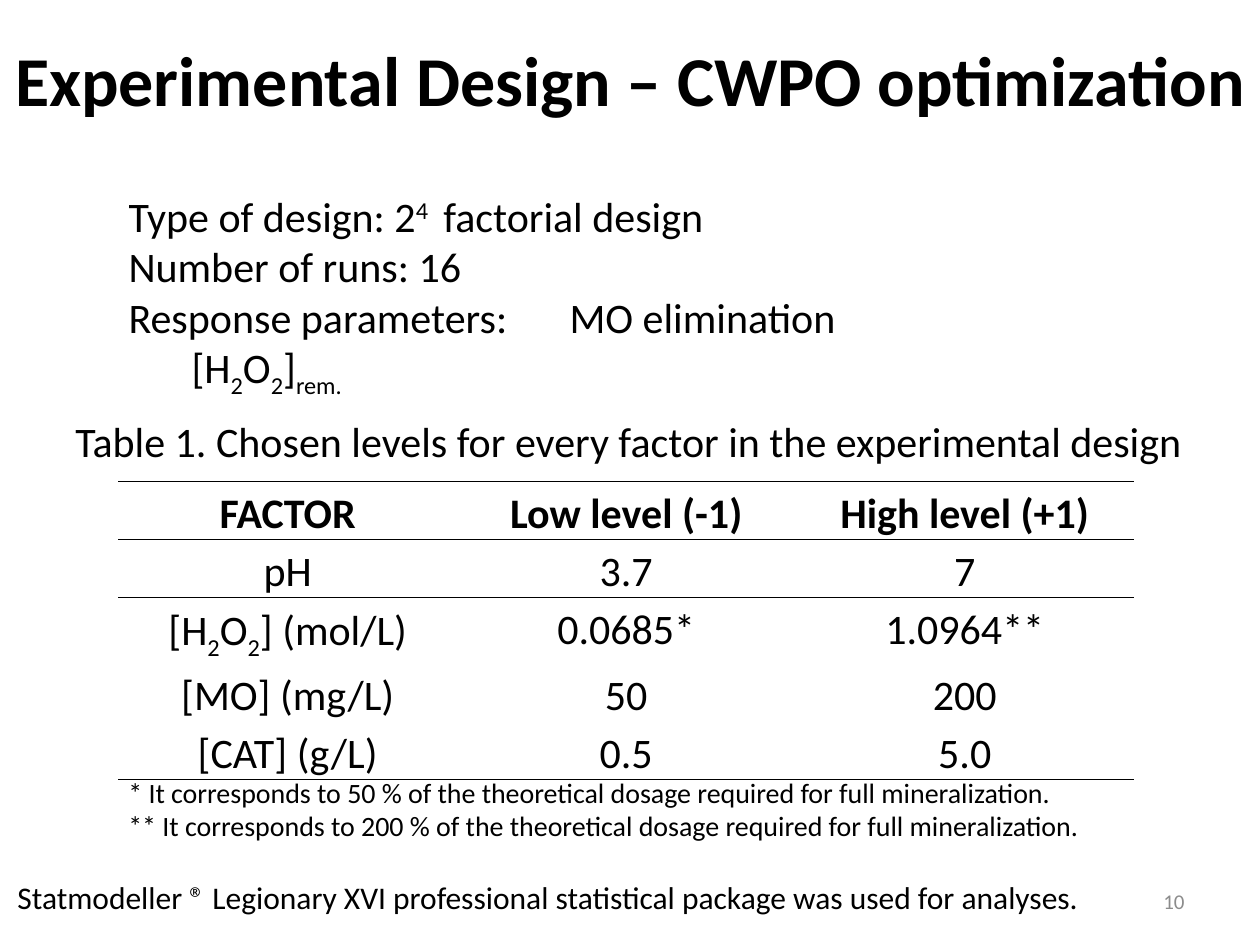
from lxml import etree
from pptx import Presentation
from pptx import util as u
from pptx.dml.color import RGBColor
from pptx.enum import text
from pptx.oxml import ns

COLORS = {"ink": "000000", "muted": "8C8C8C"}
FONT = "Calibri"
W, H = 10, 7.5
SUB, SUP = -25000, 30000
MIDDLE, TOP = text.MSO_ANCHOR.MIDDLE, text.MSO_ANCHOR.TOP
LEFT, CENTER, RIGHT = text.PP_ALIGN.LEFT, text.PP_ALIGN.CENTER, text.PP_ALIGN.RIGHT

PEROXIDE = ["[H", ("2", SUB), "O", ("2", SUB)]
DESIGN = [
    ["Type of design: 2", ("4 ", SUP), " factorial design"],
    ["Number of runs: 16"],
    ["Response parameters:\tMO elimination"],
    ["\t", *PEROXIDE, "]", ("rem.", SUB)],
]
LEVELS = [
    (["FACTOR"], ["Low level (-1)"], ["High level (+1)"]),
    (["pH"], ["3.7"], ["7"]),
    ([*PEROXIDE, "] (mol/L)"], ["0.0685*"], ["1.0964**"]),
    (["[MO] (mg/L)"], ["50"], ["200"]),
    (["[CAT] (g/L)"], ["0.5"], ["5.0"]),
]
FOOTNOTES = [
    ["* It corresponds to 50 % of the theoretical dosage required for full mineralization."],
    ["** It corresponds to 200 % of the theoretical dosage required for full mineralization."],
]


def apply(obj, values):
    for name, value in values.items():
        setattr(obj, name, value)


def sub(parent, tag, **attrs):
    return etree.SubElement(parent, ns.qn(tag), attrs)


def write(tf, lines, size, color="ink", bold=False, **para):
    """Write lines of parts; a part is a string or a (string, baseline) pair."""
    for i, parts in enumerate(lines):
        p = tf.paragraphs[0] if i == 0 else tf.add_paragraph()
        apply(p, {"alignment": LEFT, "space_before": u.Pt(0), **para})
        for part in parts:
            words, baseline = part if isinstance(part, tuple) else (part, 0)
            r = p.add_run()
            r.text = words
            apply(r.font, {"name": FONT, "size": u.Pt(size), "bold": bold})
            r.font.color.rgb = RGBColor.from_string(COLORS[color])
            if baseline:
                r.font._element.set("baseline", str(baseline))


def place(sp, box):
    for name, value in zip(("left", "top", "width", "height"), box):
        setattr(sp, name, u.Inches(value))


def add_text(s, box, lines, size, anchor=MIDDLE, wrap=True, **style):
    tf = s.shapes.add_textbox(*map(u.Inches, box)).text_frame
    apply(tf, {"word_wrap": wrap, "vertical_anchor": anchor})
    write(tf, lines, size, **style)


def add_title(s, box):
    sp = s.shapes.title
    place(sp, box)
    sp.text_frame.vertical_anchor = MIDDLE
    write(sp.text_frame, [["Experimental Design – CWPO optimization"]], 40,
          bold=True, alignment=CENTER)


def add_design(s, box):
    """Unbulleted list with one tab stop for the response parameters."""
    sp = s.placeholders[1]
    place(sp, box)
    tf = sp.text_frame
    apply(tf, {"vertical_anchor": MIDDLE, "auto_size": text.MSO_AUTO_SIZE.NONE})
    write(tf, DESIGN, 24)
    for p in tf.paragraphs:
        pPr = p._p.get_or_add_pPr()
        pPr.set("marL", "0")
        pPr.set("indent", "0")
        sub(pPr, "a:buNone")
        sub(sub(pPr, "a:tabLst"), "a:tab", pos=str(u.Inches(4)), algn="l")


def add_rule(cell, side, position):
    ln = etree.Element(ns.qn(side), w=str(u.Pt(1)))
    sub(sub(ln, "a:solidFill"), "a:srgbClr", val=COLORS["ink"])
    cell._tc.get_or_add_tcPr().insert(position, ln)


def add_levels(s, box):
    """Table with rules above and below the header and at the foot."""
    rows, cols = len(LEVELS), len(LEVELS[0])
    table = s.shapes.add_table(rows, cols, *map(u.Inches, box)).table
    apply(table, {"first_row": False, "horz_banding": False})
    style_id = table._tbl.tblPr.find(ns.qn("a:tableStyleId"))
    style_id.text = "{2D5ABB26-0587-4C30-8999-92F81FD0307C}"
    margin = u.Inches(0.07)
    for i, row in enumerate(LEVELS):
        header = i == 0
        for j, parts in enumerate(row):
            cell = table.cell(i, j)
            apply(cell, {"margin_left": margin, "margin_right": margin,
                         "margin_top": 0, "margin_bottom": 0,
                         "vertical_anchor": MIDDLE if header else TOP})
            write(cell.text_frame, [parts], 24, bold=header, alignment=CENTER,
                  line_spacing=1.15, space_after=u.Pt(6))
            cell.fill.background()
            if i in (0, rows - 1):
                add_rule(cell, "a:lnB", 0)
            if i in (0, 1):
                add_rule(cell, "a:lnT", 0)


def main():
    prs = Presentation()
    prs.slide_width, prs.slide_height = u.Inches(W), u.Inches(H)
    s = prs.slides.add_slide(prs.slide_layouts[1])
    margin = 0.92
    add_title(s, (0, 0, W, H / 6))
    add_design(s, (margin, 1.48, W / 1.2, 1.72))
    add_text(s, (0.5, 3.25, 9.07, 0.5),
             [["Table 1. Chosen levels for every factor in the experimental design"]],
             24, wrap=False)
    add_levels(s, (0.94, 3.82, 8.06, 2.27))
    add_text(s, (margin, 6.1, 7.85, 0.64), FOOTNOTES, 16, wrap=False)
    add_text(s, (0.04, 6.92, W, 0.4),
             [["Statmodeller ® Legionary XVI professional statistical package "
               "was used for analyses."]], 18, anchor=TOP)
    add_text(s, (7.17, 6.95, 2.33, 0.4), [["10"]], 12, color="muted", alignment=RIGHT)
    prs.save("out.pptx")


if __name__ == "__main__":
    main()
